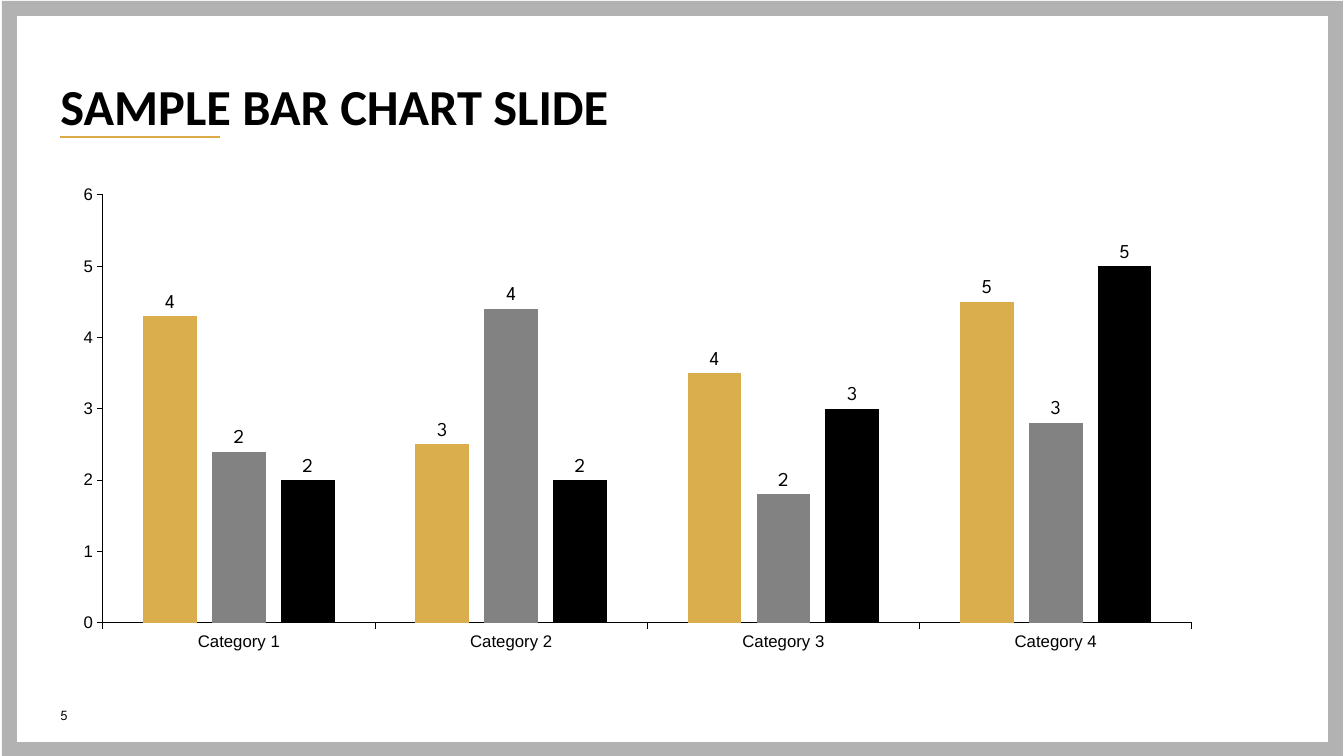
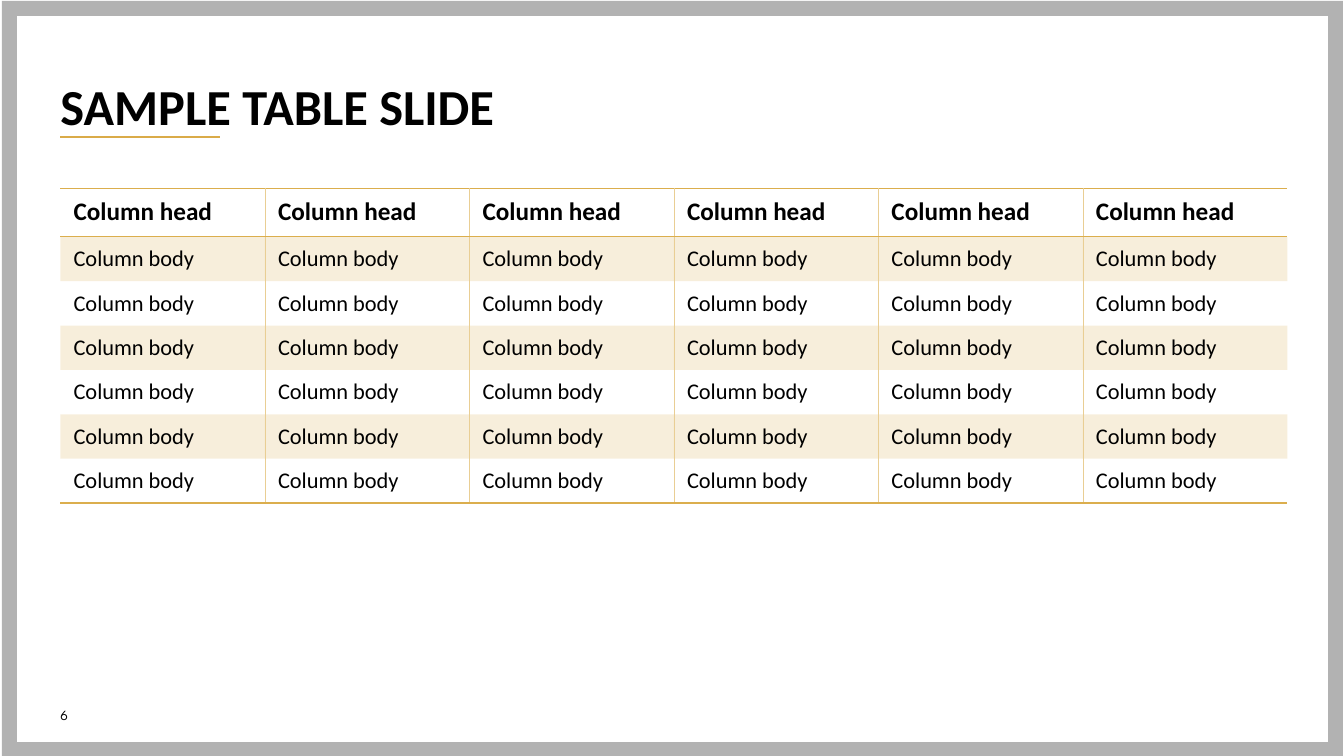
from lxml import etree
from pptx import Presentation
from pptx.chart.data import CategoryChartData
from pptx.dml.color import RGBColor
from pptx.enum.chart import XL_CHART_TYPE, XL_LABEL_POSITION, XL_TICK_MARK
from pptx.enum.shapes import MSO_CONNECTOR, MSO_SHAPE
from pptx.enum.text import MSO_ANCHOR, PP_ALIGN
from pptx.oxml.ns import qn
from pptx.util import Inches, Pt

COLUMNS = XL_CHART_TYPE.COLUMN_CLUSTERED
OUTSIDE_END = XL_LABEL_POSITION.OUTSIDE_END
TICK_OUT, TICK_NONE = XL_TICK_MARK.OUTSIDE, XL_TICK_MARK.NONE
RECTANGLE = MSO_SHAPE.RECTANGLE
STRAIGHT = MSO_CONNECTOR.STRAIGHT
BOTTOM = MSO_ANCHOR.BOTTOM
LEFT = PP_ALIGN.LEFT

BLACK, WHITE, FRAME_GREY, BAR_GREY = "000000", "FFFFFF", "B2B2B2", "828282"
GOLD, RULE_GOLD, PALE_GOLD = "DBAE4D", "DAAB48", "E9CE94"
HEADING_FONT, NUMBER_FONT, AXIS_FONT = "Calibri", "League Spartan", "Arial"
MARGIN = 0.6
CONTENT_WIDTH = 12.17
FIRST_PAGE = 5
NO_TABLE_STYLE = "{2D5ABB26-0587-4C30-8999-92F81FD0307C}"


def rgb(hex_color):
    return RGBColor.from_string(hex_color)


def set_font(font, name, size, bold=False):
    font.name, font.size, font.bold = name, Pt(size), bold
    font.color.rgb = rgb(BLACK)


prs = Presentation()
prs.slide_width, prs.slide_height = Inches(13.33), Inches(7.5)
layout = prs.slide_layouts[5]
for placeholder in list(layout.placeholders)[1:]:
    placeholder.element.getparent().remove(placeholder.element)

chart_slide = prs.slides.add_slide(layout)
table_slide = prs.slides.add_slide(layout)

# Frame and title rule, moved to the layout so that both slides share them
frame_parts = []
for box, color in [((0.02, 0.01, 13.3, 7.5), FRAME_GREY),
                   ((0.17, 0.16, 13, 7.2), WHITE)]:
    panel = chart_slide.shapes.add_shape(RECTANGLE, *map(Inches, box))
    panel.shadow.inherit = False
    panel.fill.solid()
    panel.fill.fore_color.rgb = rgb(color)
    panel.line.fill.background()
    frame_parts.append(panel)
title_rule = chart_slide.shapes.add_connector(
    STRAIGHT, Inches(MARGIN), Inches(1.36), Inches(2.18), Inches(1.36))
title_rule.line.color.rgb = rgb(RULE_GOLD)
title_rule.line.width = Pt(2)
etree.SubElement(title_rule.element.spPr, qn("a:effectLst"))
frame_parts.append(title_rule)
for part in frame_parts:
    layout.shapes.element.append(part.element)

# Titles and page numbers
pages = [(chart_slide, "SAMPLE BAR CHART SLIDE"), (table_slide, "SAMPLE TABLE SLIDE")]
for page, (slide, heading) in enumerate(pages, start=FIRST_PAGE):
    title = slide.shapes.title
    title.left, title.top = Inches(MARGIN), Inches(0.48)
    title.width, title.height = Inches(CONTENT_WIDTH), Inches(0.88)
    page_number = slide.shapes.add_textbox(
        Inches(MARGIN), Inches(6.83), Inches(0.67), Inches(0.35))
    for holder, text, font_name, size, bold in [
            (title, heading, HEADING_FONT, 36, True),
            (page_number, str(page), NUMBER_FONT, 10, False)]:
        frame = holder.text_frame
        frame.text = text
        frame.word_wrap = True
        frame.vertical_anchor = BOTTOM
        frame.margin_left = frame.margin_right = 0
        frame.margin_top = frame.margin_bottom = 0
        paragraph = frame.paragraphs[0]
        paragraph.alignment = LEFT
        paragraph.line_spacing = 0.95
        set_font(paragraph.font, font_name, size, bold)

# Bar chart
chart_data = CategoryChartData(number_format="0")
chart_data.categories = [f"Category {n}" for n in range(1, 5)]
chart_data.add_series("Series 1", (4.3, 2.5, 3.5, 4.5))
chart_data.add_series("Series 2", (2.4, 4.4, 1.8, 2.8))
chart_data.add_series("Series 3", (2, 2, 3, 5))
chart = chart_slide.shapes.add_chart(
    COLUMNS, Inches(MARGIN), Inches(1.75), Inches(11.45), Inches(4.8), chart_data).chart
chart.has_legend = False
chart.has_title = False
set_font(chart.font, NUMBER_FONT, 18)

for axis in (chart.category_axis, chart.value_axis):
    axis.has_major_gridlines = False
    axis.major_tick_mark, axis.minor_tick_mark = TICK_OUT, TICK_NONE
    axis.format.line.color.rgb = rgb(BLACK)
    axis.format.line.width = Pt(0.75)
    set_font(axis.tick_labels.font, AXIS_FONT, 12)
chart.value_axis.minimum_scale, chart.value_axis.maximum_scale = 0, 6
chart.value_axis.major_unit = 1

plot = chart.plots[0]
plot.vary_by_categories = False
plot.gap_width, plot.overlap = 150, -28
for series, color in zip(plot.series, (GOLD, BAR_GREY, BLACK)):
    series.format.fill.solid()
    series.format.fill.fore_color.rgb = rgb(color)
    labels = series.data_labels
    labels.show_value = True
    labels.position = OUTSIDE_END
    labels.number_format, labels.number_format_is_linked = "0", False
    set_font(labels.font, NUMBER_FONT, 14)

# Table
ROWS, COLS = 7, 6
HEAD_HEIGHT, BODY_HEIGHT = 0.48, 0.44
table = table_slide.shapes.add_table(
    ROWS, COLS, Inches(MARGIN), Inches(1.87), Inches(CONTENT_WIDTH),
    Inches(HEAD_HEIGHT + (ROWS - 1) * BODY_HEIGHT)).table
table._tbl.tblPr.find(qn("a:tableStyleId")).text = NO_TABLE_STYLE

for r, row in enumerate(table.rows):
    is_head = r == 0
    row.height = Inches(HEAD_HEIGHT if is_head else BODY_HEIGHT)
    for c, cell in enumerate(row.cells):
        cell.text = "Column head" if is_head else "Column body"
        cell.margin_left = cell.margin_right = Inches(0.13)
        cell.margin_top = cell.margin_bottom = Inches(0.1)
        paragraph = cell.text_frame.paragraphs[0]
        paragraph.line_spacing = 0.9
        set_font(paragraph.font, HEADING_FONT, 18 if is_head else 16, is_head)

        cell_props = cell._tc.get_or_add_tcPr()
        for side, visible, color, points in [
                ("lnL", c > 0, PALE_GOLD, 0.5),
                ("lnR", c < COLS - 1, PALE_GOLD, 0.5),
                ("lnT", is_head, GOLD, 1),
                ("lnB", r in (0, ROWS - 1), GOLD, 1)]:
            if visible:
                border = etree.SubElement(cell_props, qn(f"a:{side}"), w=str(Pt(points)))
                line_fill = etree.SubElement(border, qn("a:solidFill"))
                etree.SubElement(line_fill, qn("a:srgbClr"), val=color)

        if r % 2:
            cell.fill.solid()
            cell.fill.fore_color.rgb = rgb(GOLD)
            band_color = cell_props.find(qn("a:solidFill")).find(qn("a:srgbClr"))
            etree.SubElement(band_color, qn("a:alpha"), val="20000")
        else:
            cell.fill.background()

prs.save("out.pptx")
